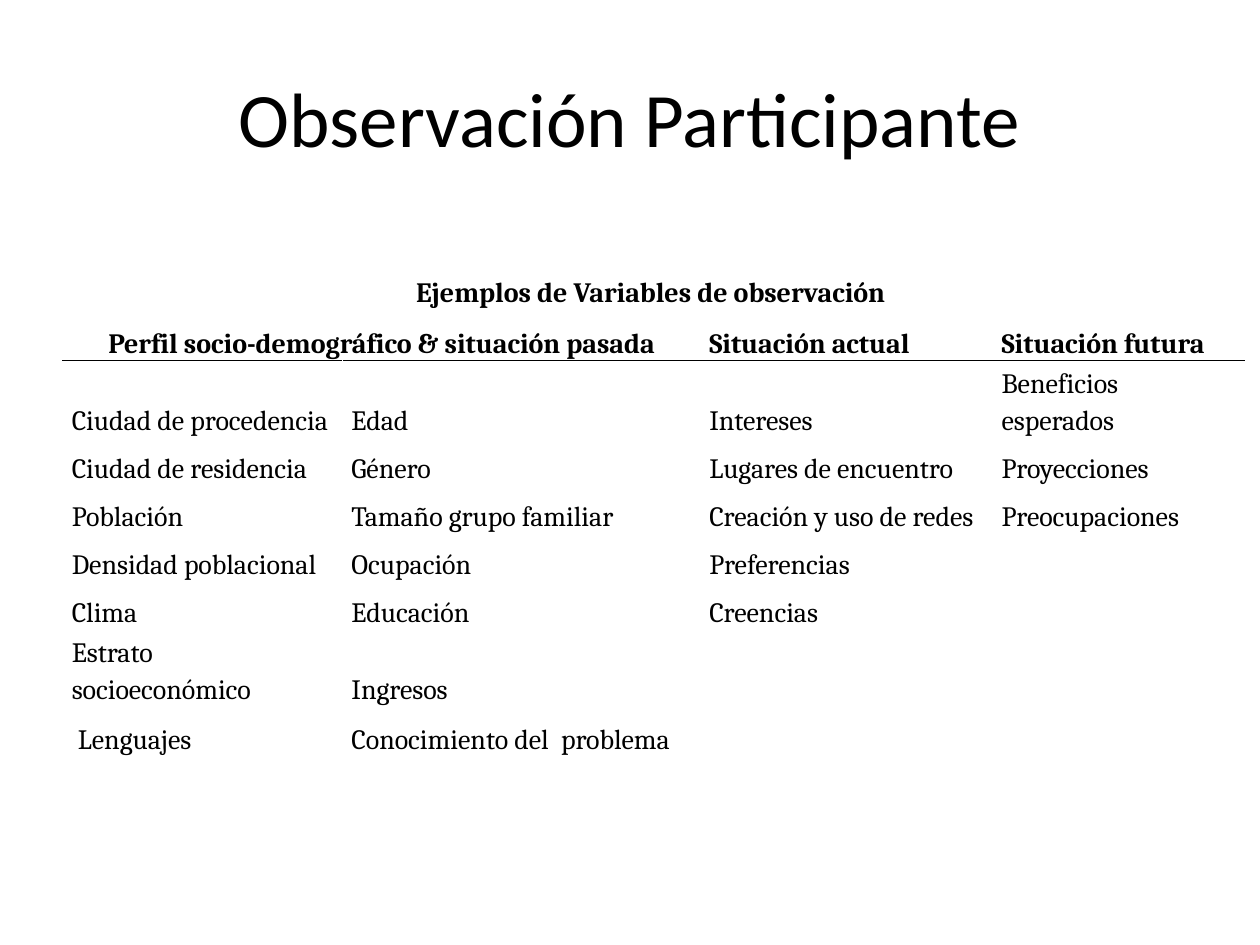
import dataclasses

import lxml.etree
import pptx
import pptx.dml.color
import pptx.enum.text
import pptx.oxml.ns
import pptx.util
from pptx.util import Inches

ALIGN = pptx.enum.text.PP_ALIGN
ANCHOR = pptx.enum.text.MSO_ANCHOR


@dataclasses.dataclass(frozen=True)
class Theme:
    ink: str = "000000"
    paper: str = "FFFFFF"
    title_font: str = "Calibri"
    table_font: str = "Cambria"
    title_size: int = 44
    table_size: int = 16
    line_spacing: float = 1.15


THEME = Theme()
HEADING = "Ejemplos de Variables de observación "
GROUPS = ["Perfil socio-demográfico & situación pasada", "", "Situación actual", "Situación futura"]
VARIABLES = [
    ["Ciudad de procedencia", "Edad", "Intereses", "Beneficios esperados"],
    ["Ciudad de residencia", "Género", "Lugares de encuentro", "Proyecciones"],
    ["Población", "Tamaño grupo familiar", "Creación y uso de redes", "Preocupaciones"],
    ["Densidad poblacional", "Ocupación", "Preferencias", ""],
    ["Clima", "Educación", "Creencias", ""],
    ["Estrato socioeconómico", "Ingresos", "", ""],
    [" Lenguajes", "Conocimiento del  problema", "", ""],
]
COLUMN_WIDTHS = [2.22, 2.84, 2.32, 2]
ROW_HEIGHTS = [0.36, 0.4] + [0.38] * 6 + [0.4]


def add_text(paragraph, text, font_name, size, bold=False):
    run = paragraph.add_run()
    run.text = text
    run.font.name = font_name
    run.font.size = pptx.util.Pt(size)
    run.font.bold = bold
    run.font.color.rgb = pptx.dml.color.RGBColor.from_string(THEME.ink)


def set_borders(cell, colors, widths):
    properties = cell._tc.get_or_add_tcPr()
    for index, side in enumerate(("lnL", "lnR", "lnT", "lnB")):
        line = lxml.etree.Element(pptx.oxml.ns.qn(f"a:{side}"), w=str(pptx.util.Pt(widths.get(side, 1))))
        fill = lxml.etree.SubElement(line, pptx.oxml.ns.qn("a:solidFill"))
        lxml.etree.SubElement(fill, pptx.oxml.ns.qn("a:srgbClr"), val=colors.get(side, THEME.paper))
        properties.insert(index, line)


def fill_cell(cell, text, row, column):
    cell.fill.background()
    cell.vertical_anchor = ANCHOR.BOTTOM
    cell.margin_left = cell.margin_right = Inches(0.07)
    cell.margin_top = cell.margin_bottom = 0
    rule_side = {1: "lnB", 2: "lnT"}.get(row)
    colors = {rule_side: THEME.ink} if rule_side else {}
    set_borders(cell, colors, {"lnB": 3} if row == 0 else {})
    if text:
        paragraph = cell.text_frame.paragraphs[0]
        paragraph.line_spacing = THEME.line_spacing
        paragraph.alignment = ALIGN.CENTER if row < 2 and column == 0 else ALIGN.LEFT
        add_text(paragraph, text, THEME.table_font, THEME.table_size, bold=row < 2)


def add_title(slide, left, top, width, height):
    shape = slide.shapes.add_textbox(left, top, width, height)
    frame = shape.text_frame
    frame.word_wrap = True
    frame.vertical_anchor = ANCHOR.MIDDLE
    paragraph = frame.paragraphs[0]
    paragraph.alignment = ALIGN.CENTER
    add_text(paragraph, "Observación Participante", THEME.title_font, THEME.title_size)


def add_variables_table(slide, left, top, width, height):
    rows = [[HEADING, "", "", ""], GROUPS] + VARIABLES
    table = slide.shapes.add_table(len(rows), len(COLUMN_WIDTHS), left, top, width, height).table
    table.first_row = False
    table.horz_banding = False
    for column, share in zip(table.columns, COLUMN_WIDTHS):
        column.width = int(width * share / sum(COLUMN_WIDTHS))
    for row, row_height in zip(table.rows, ROW_HEIGHTS):
        row.height = Inches(row_height)
    for row_index, texts in enumerate(rows):
        for column_index, text in enumerate(texts):
            fill_cell(table.cell(row_index, column_index), text, row_index, column_index)
    table.cell(0, 0).merge(table.cell(0, 3))
    table.cell(1, 0).merge(table.cell(1, 1))


def main():
    presentation = pptx.Presentation()
    presentation.slide_width = Inches(10)
    presentation.slide_height = Inches(7.5)
    slide = presentation.slides.add_slide(presentation.slide_layouts[6])
    add_title(slide, Inches(0.5), Inches(0.3), Inches(9), Inches(1.25))
    add_variables_table(slide, Inches(0.5), Inches(2.1), Inches(9.38), Inches(sum(ROW_HEIGHTS)))
    presentation.save("out.pptx")


if __name__ == "__main__":
    main()
